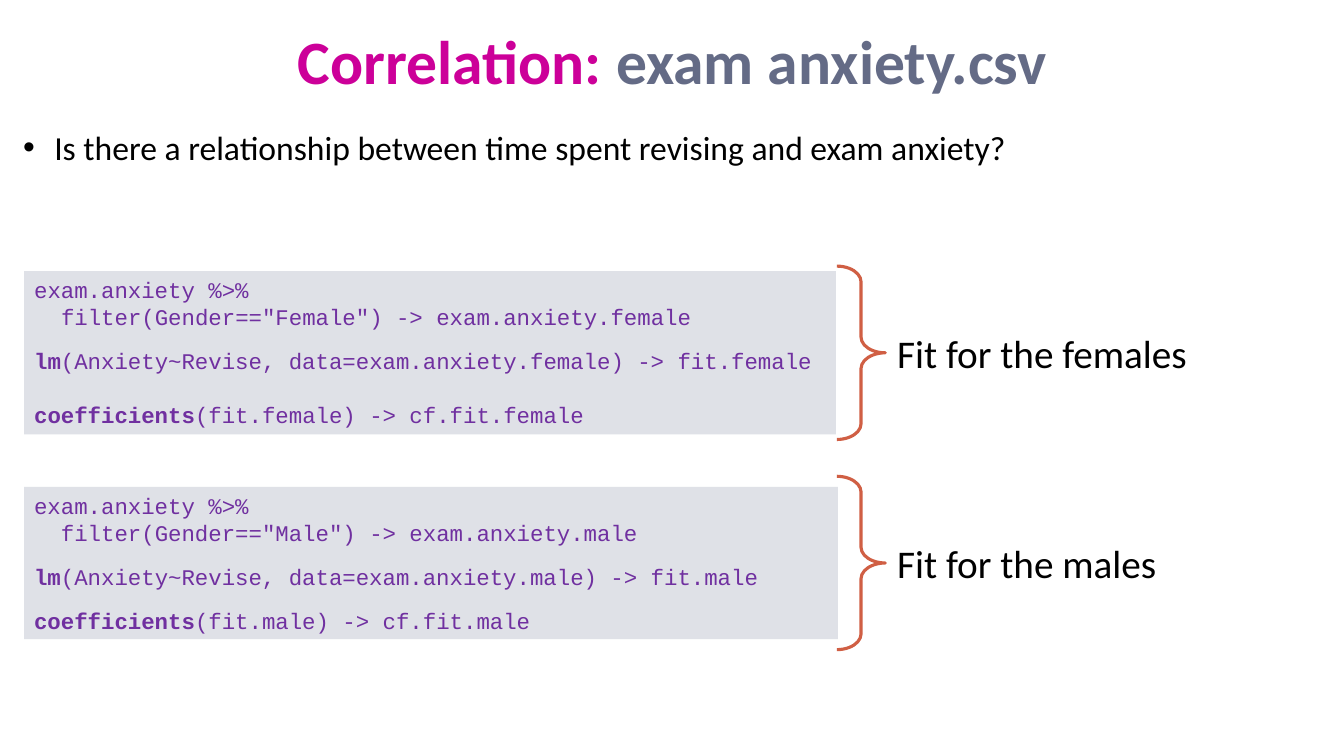
from dataclasses import dataclass

from lxml.etree import SubElement
from pptx import Presentation
from pptx.dml.color import RGBColor
from pptx.enum.shapes import MSO_SHAPE as Shape
from pptx.enum.text import MSO_ANCHOR as Anchor, MSO_AUTO_SIZE as AutoSize, PP_ALIGN as Align
from pptx.oxml.ns import qn
from pptx.util import Inches, Pt


@dataclass(frozen=True)
class Theme:
    body_font: str = "Calibri"
    code_font: str = "Courier New"
    title_size: float = 44
    question_size: float = 24
    label_size: float = 28
    code_size: float = 16
    code_leading: float = 19.3
    small_gap: float = 12.2
    large_gap: float = 19.3
    code_indent: float = 19.2
    black: str = "000000"
    pink: str = "CC0099"
    slate: str = "646B86"
    purple: str = "7030A0"
    panel: str = "DFE1E7"
    brace: str = "D05F44"


THEME = Theme()


def add_run(paragraph, text, size, color, font=THEME.body_font, bold=False):
    run = paragraph.add_run()
    run.text = text
    run.font.name = font
    run.font.size = Pt(size)
    run.font.bold = bold
    run.font.color.rgb = RGBColor.from_string(color)


def add_text_box(slide, left, top, width, height, text, size, wrap):
    box = slide.shapes.add_textbox(Inches(left), Inches(top), Inches(width), Inches(height))
    box.text_frame.word_wrap = wrap
    paragraph = box.text_frame.paragraphs[0]
    add_run(paragraph, text, size, THEME.black)
    return paragraph


def add_title(slide, left, top, width, height):
    title = slide.shapes.title
    title.left, title.top = Inches(left), Inches(top)
    title.width, title.height = Inches(width), Inches(height)
    frame = title.text_frame
    frame.word_wrap = True
    frame.auto_size = AutoSize.NONE
    frame.vertical_anchor = Anchor.MIDDLE
    paragraph = frame.paragraphs[0]
    paragraph.alignment = Align.CENTER
    add_run(paragraph, "Correlation:", THEME.title_size, THEME.pink, bold=True)
    add_run(paragraph, " exam anxiety.csv", THEME.title_size, THEME.slate, bold=True)


def add_question(slide, left, top, width, height):
    paragraph = add_text_box(
        slide, left, top, width, height,
        "Is there a relationship between time spent revising and exam anxiety?",
        THEME.question_size, wrap=True)
    properties = paragraph._p.get_or_add_pPr()
    properties.set("marL", str(Inches(0.31)))
    properties.set("indent", str(-Inches(0.31)))
    SubElement(properties, qn("a:buFont"), typeface="Arial")
    SubElement(properties, qn("a:buChar"), char="•")


def add_code_panel(slide, left, top, width, height, gender, last_gap):
    panel = slide.shapes.add_shape(
        Shape.RECTANGLE, Inches(left), Inches(top), Inches(width), Inches(height))
    panel.shadow.inherit = False
    panel.fill.solid()
    panel.fill.fore_color.rgb = RGBColor.from_string(THEME.panel)
    panel.line.fill.background()
    frame = panel.text_frame
    frame.word_wrap = True
    frame.vertical_anchor = Anchor.TOP

    # Each line: bold function name, rest of the code, gap above, indent
    group = gender.lower()
    lines = [
        ("", "exam.anxiety %>%", 0, 0),
        ("", f'filter(Gender=="{gender}") -> exam.anxiety.{group}', 0, THEME.code_indent),
        ("lm", f"(Anxiety~Revise, data=exam.anxiety.{group}) -> fit.{group}", THEME.small_gap, 0),
        ("coefficients", f"(fit.{group}) -> cf.fit.{group}", last_gap, 0),
    ]
    for index, (function, code, gap, indent) in enumerate(lines):
        paragraph = frame.add_paragraph() if index else frame.paragraphs[0]
        paragraph.alignment = Align.LEFT
        paragraph.line_spacing = Pt(THEME.code_leading)
        paragraph.space_before = Pt(gap)
        paragraph._p.get_or_add_pPr().set("marL", str(Pt(indent)))
        if function:
            add_run(paragraph, function, THEME.code_size, THEME.purple, THEME.code_font, bold=True)
        add_run(paragraph, code, THEME.code_size, THEME.purple, THEME.code_font)


def add_fit(slide, left, top, width, height, gender, last_gap, label_width):
    """Code panel with a brace and a label centred on its right."""
    add_code_panel(slide, left, top, width, height, gender, last_gap)
    middle = top + height / 2

    # Brace
    brace_left, brace_width, brace_height = left + 8.06, 0.48, 1.72
    brace = slide.shapes.add_shape(
        Shape.RIGHT_BRACE, Inches(brace_left), Inches(middle - brace_height / 2),
        Inches(brace_width), Inches(brace_height))
    brace.adjustments[0] = 0.326
    brace.adjustments[1] = 0.5
    brace.shadow.inherit = False
    brace.fill.background()
    brace.line.color.rgb = RGBColor.from_string(THEME.brace)
    brace.line.width = Pt(2.25)

    # Label
    label_height = 0.57
    add_text_box(
        slide, brace_left + 0.5, middle - label_height / 2, label_width, label_height,
        f"Fit for the {gender.lower()}s", THEME.label_size, wrap=False)


def main():
    presentation = Presentation()
    presentation.slide_width = Inches(13.33)
    presentation.slide_height = Inches(7.5)
    slide = presentation.slides.add_slide(presentation.slide_layouts.get_by_name("Title Only"))

    add_title(slide, 2.17, 0.2, 9, 0.79)
    add_question(slide, 0.13, 1.21, 11.98, 0.5)
    add_fit(slide, 0.24, 2.69, 8.05, 1.62, "Female", THEME.large_gap, label_width=3.1)
    add_fit(slide, 0.24, 4.83, 8.07, 1.51, "Male", THEME.small_gap, label_width=2.8)

    presentation.save("out.pptx")


if __name__ == "__main__":
    main()
